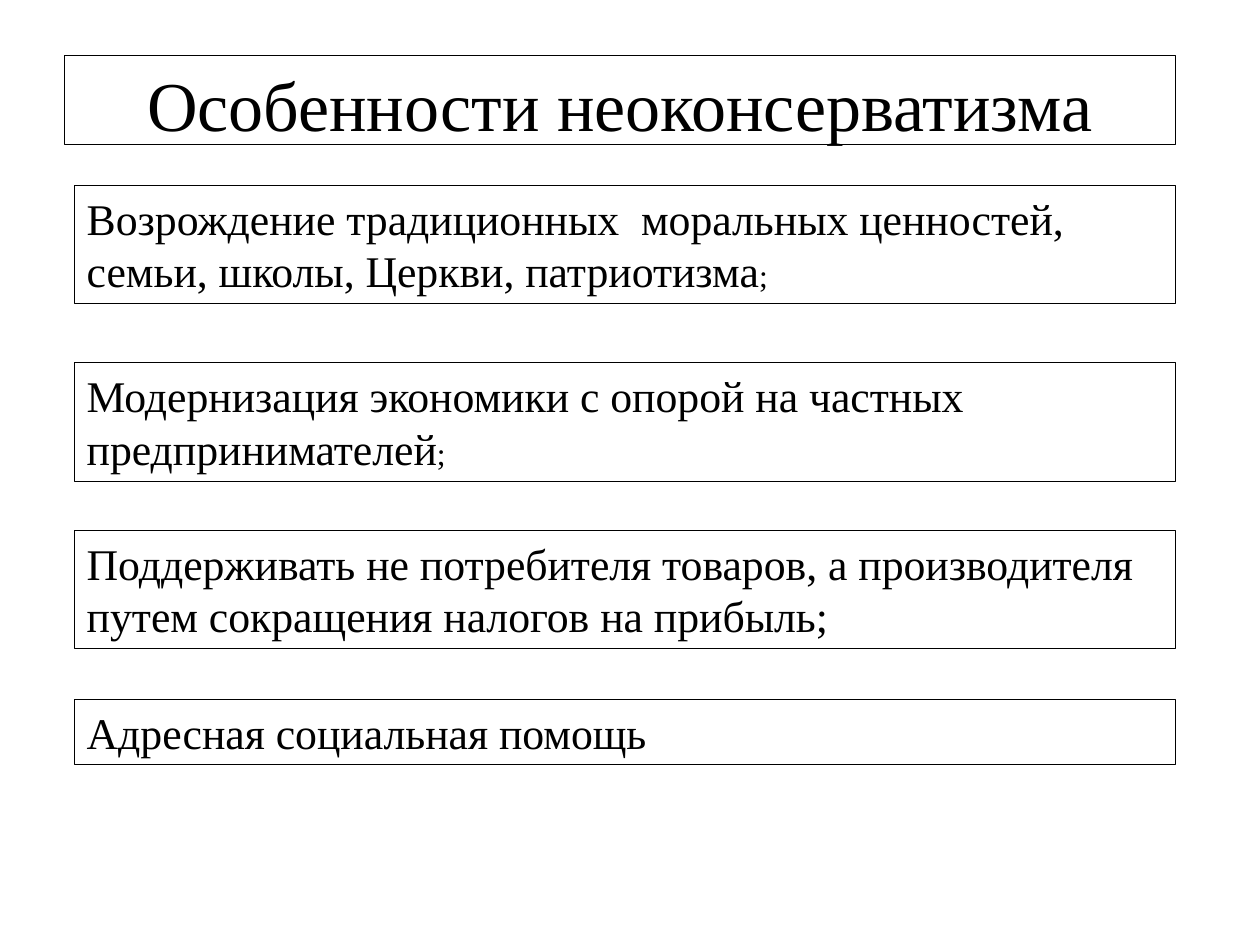
from pptx import Presentation
from pptx.dml.color import RGBColor
from pptx.enum.shapes import MSO_SHAPE
from pptx.enum.text import MSO_ANCHOR, MSO_AUTO_SIZE, PP_ALIGN
from pptx.util import Inches, Pt

TITLE = "Особенности неоконсерватизма"
FEATURES = [
    (1.47, 0.94, [("Возрождение традиционных  моральных ценностей, "
                   "семьи, школы, Церкви, патриотизма", 25), (";", 18)]),
    (2.88, 0.94, [("Модернизация экономики с опорой на частных "
                   "предпринимателей", 25), (";", 18)]),
    (4.21, 0.94, [("Поддерживать не потребителя товаров, а производителя "
                   "путем сокращения налогов на прибыль;", 25)]),
    (5.55, 0.52, [("Адресная социальная помощь", 25)]),
]
FONT = "Times New Roman"
BLACK, WHITE = "000000", "FFFFFF"
RIGHT = 9.33
TITLE_LEFT, FEATURE_LEFT = 0.51, 0.59
FRAME = {
    "word_wrap": True, "vertical_anchor": MSO_ANCHOR.TOP,
    "margin_top": Inches(0.05), "margin_bottom": Inches(0.05),
}
TITLE_FRAME = {
    **FRAME, "margin_bottom": 0, "auto_size": MSO_AUTO_SIZE.NONE,
}
FEATURE_FRAME = {**FRAME, "auto_size": MSO_AUTO_SIZE.SHAPE_TO_FIT_TEXT}


def color(value):
    return RGBColor.from_string(value)


def apply(target, values):
    for name, value in values.items():
        setattr(target, name, value)


def place(box, left, top, height):
    apply(box, {"left": Inches(left), "top": Inches(top),
                "width": Inches(RIGHT - left), "height": Inches(height)})


def outline(box, width):
    box.line.color.rgb = color(BLACK)
    box.line.width = Pt(width)


def write(box, spans, frame_format, alignment):
    frame = box.text_frame
    apply(frame, frame_format)
    para = frame.paragraphs[0]
    apply(para, {"alignment": alignment, "line_spacing": 1.0})
    for text, size in spans:
        span = para.add_run()
        span.text = text
        apply(span.font, {"name": FONT, "size": Pt(size)})
        span.font.color.rgb = color(BLACK)


def add_title(page):
    box = page.shapes.title
    place(box, TITLE_LEFT, 0.44, 0.71)
    box.fill.solid()
    box.fill.fore_color.rgb = color(WHITE)
    outline(box, 0.5)
    write(box, [(TITLE, 40)], TITLE_FRAME, PP_ALIGN.CENTER)


def add_feature(page, top, height, spans):
    box = page.shapes.add_shape(MSO_SHAPE.RECTANGLE, 0, 0, 0, 0)
    place(box, FEATURE_LEFT, top, height)
    box.shadow.inherit = False
    box.fill.background()
    outline(box, 0.75)
    write(box, spans, FEATURE_FRAME, PP_ALIGN.LEFT)


def main():
    deck = Presentation()
    apply(deck, {"slide_width": Inches(10), "slide_height": Inches(7.5)})
    page = deck.slides.add_slide(deck.slide_layouts[5])
    add_title(page)
    for feature in FEATURES:
        add_feature(page, *feature)
    deck.save("out.pptx")


if __name__ == "__main__":
    main()
